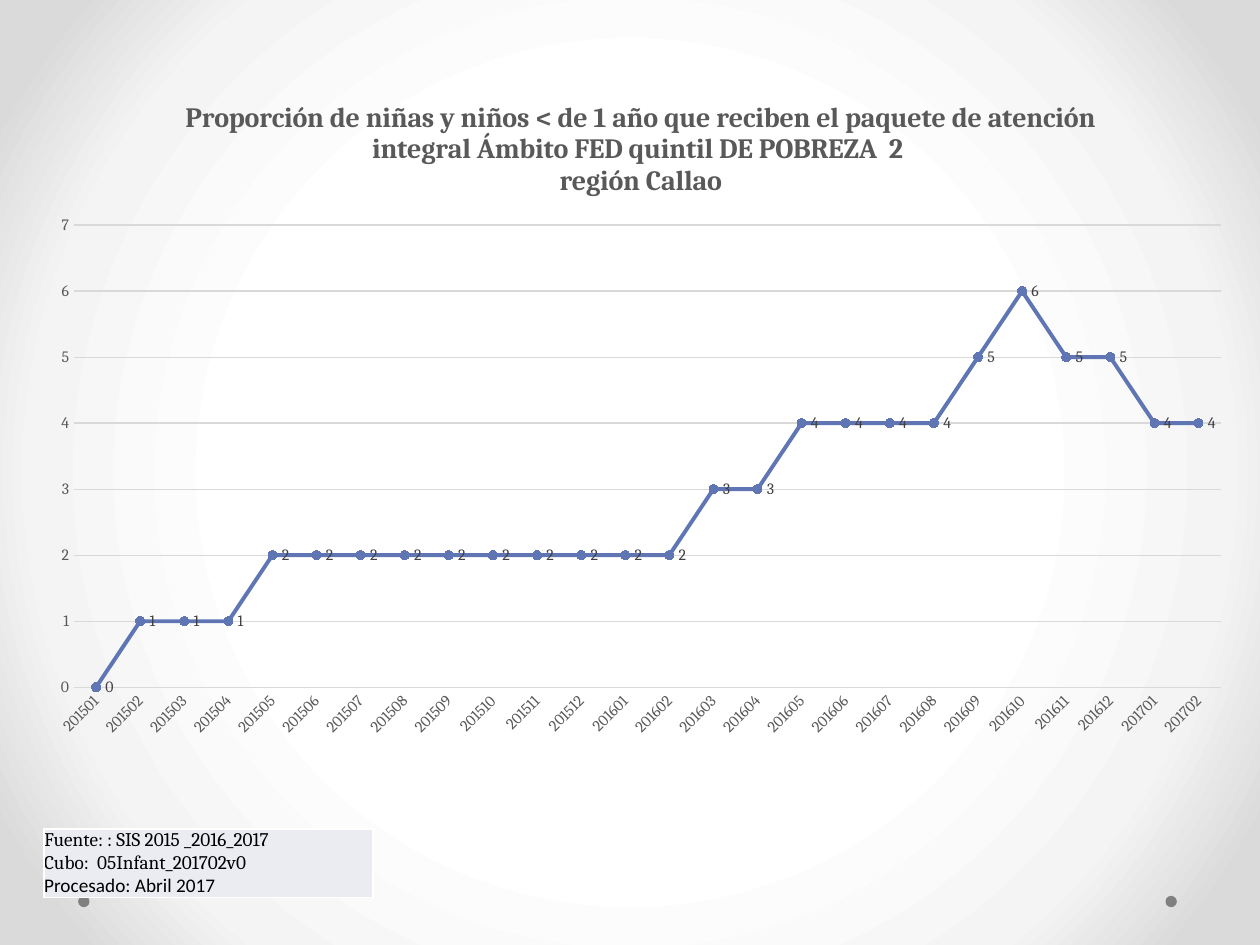
from typing import NamedTuple

from pptx import Presentation
from pptx import util as u
from pptx.chart.data import CategoryChartData
from pptx.dml.color import RGBColor
from pptx.enum import chart as ch, shapes, text
from pptx.oxml import parse_xml
from pptx.oxml.ns import nsdecls

WHITE = RGBColor(0xFF, 0xFF, 0xFF)
BLACK = RGBColor(0, 0, 0)
DOT_GREY = RGBColor(0x80, 0x80, 0x80)
AXIS_GREY = RGBColor(0x59, 0x59, 0x59)
LABEL_GREY = RGBColor(0x40, 0x40, 0x40)
GRID_GREY = RGBColor(0xD9, 0xD9, 0xD9)
SERIES_BLUE = RGBColor(0x60, 0x76, 0xB4)
SOURCE_FILL = RGBColor(0xEA, 0xEC, 0xF2)
BACKGROUND_STOPS = ((50, WHITE), (76, RGBColor(0xF4, 0xF4, 0xF4)),
                    (92, RGBColor(0xDA, 0xDA, 0xDA)))

SLIDE_WIDTH, SLIDE_HEIGHT = u.Inches(10), u.Inches(7.5)
MONTHS = [f"{year}{month:02d}" for year, last in ((2015, 12), (2016, 12), (2017, 2))
          for month in range(1, last + 1)]
CHILDREN = [0, 1, 1, 1] + [2] * 10 + [3, 3] + [4] * 4 + [5, 6, 5, 5, 4, 4]


class Area(NamedTuple):
    """A rectangle in shares of its container's width and height."""
    left: float
    top: float
    width: float
    height: float

    def on_slide(self) -> tuple:
        return tuple(u.Emu(round(share * size)) for share, size in
                     zip(self, (SLIDE_WIDTH, SLIDE_HEIGHT) * 2))


class Line(NamedTuple):
    wording: str
    font: str = "Cambria"


DOTS = [Area(left, 0.948, 0.009, 0.012) for left in (0.062, 0.925)]
SOURCE_AREA = Area(0.035, 0.877, 0.261, 0.073)
CHART_AREA = Area(0.028, 0.08, 0.961, 0.713)
PLOT_AREA = Area(0.032, 0.222, 0.947, 0.686)
TITLE = [Line("Proporción de niñas y niños < de 1 año que reciben el paquete de atención "
              "integral Ámbito FED quintil DE POBREZA  2 "),
         Line("región Callao")]
SOURCE = [Line("Fuente: : SIS 2015 _2016_2017"), Line("Cubo:  05Infant_201702v0"),
          Line("Procesado: Abril 2017", "Calibri")]


def format_font(font, *, size: float, color: RGBColor, name: str = "Cambria",
                bold: bool = False) -> None:
    font.size, font.name, font.bold = u.Pt(size), name, bold
    font.color.rgb = color


def write_lines(frame, lines: list[Line], *, size: float, color: RGBColor,
                bold: bool = False, align=text.PP_ALIGN.LEFT) -> None:
    for index, line in enumerate(lines):
        paragraph = frame.add_paragraph() if index else frame.paragraphs[0]
        paragraph.alignment = align
        run = paragraph.add_run()
        run.text = line.wording
        format_font(run.font, size=size, color=color, name=line.font, bold=bold)


def paint_background(slide) -> None:
    """Give the slide a round gradient that darkens towards the edges."""
    stops = "".join(f'<a:gs pos="{share * 1000}"><a:srgbClr val="{color}"/></a:gs>'
                    for share, color in BACKGROUND_STOPS)
    slide.element.cSld.insert(0, parse_xml(
        f'<p:bg {nsdecls("p", "a")}><p:bgPr><a:gradFill rotWithShape="1">'
        f'<a:gsLst>{stops}</a:gsLst><a:path path="circle">'
        '<a:fillToRect l="50000" t="50000" r="50000" b="50000"/></a:path>'
        '</a:gradFill><a:effectLst/></p:bgPr></p:bg>'))


def add_dot(slide, area: Area) -> None:
    dot = slide.shapes.add_shape(shapes.MSO_SHAPE.OVAL, *area.on_slide())
    dot.shadow.inherit = False
    dot.fill.solid()
    dot.fill.fore_color.rgb = DOT_GREY
    dot.line.fill.background()


def add_source_table(slide) -> None:
    table = slide.shapes.add_table(1, 1, *SOURCE_AREA.on_slide()).table
    table.first_row = table.horz_banding = False
    cell = table.cell(0, 0)
    cell.margin_left = cell.margin_right = cell.margin_top = cell.margin_bottom = 0
    cell.vertical_anchor = text.MSO_ANCHOR.BOTTOM
    cell.fill.solid()
    cell.fill.fore_color.rgb = SOURCE_FILL
    write_lines(cell.text_frame, SOURCE, size=11, color=BLACK)
    properties = cell.fill._xPr
    for index, side in enumerate("LRTB"):
        properties.insert(index, parse_xml(
            f'<a:ln{side} {nsdecls("a")} w="{u.Pt(1)}"><a:solidFill>'
            f'<a:srgbClr val="{WHITE}"/></a:solidFill></a:ln{side}>'))


def style_axis(axis) -> None:
    axis.major_tick_mark = axis.minor_tick_mark = ch.XL_TICK_MARK.NONE
    format_font(axis.tick_labels.font, size=9, color=AXIS_GREY)


def style_line(line, color: RGBColor, width: float) -> None:
    line.color.rgb = color
    line.width = u.Pt(width)


def style_series(series) -> None:
    series.smooth = False
    style_line(series.format.line, SERIES_BLUE, 2.25)
    marker = series.marker
    marker.style, marker.size = ch.XL_MARKER_STYLE.CIRCLE, 5
    marker.format.fill.solid()
    marker.format.fill.fore_color.rgb = SERIES_BLUE
    style_line(marker.format.line, SERIES_BLUE, 0.75)
    labels = series.data_labels
    labels.show_value = True
    labels.position = ch.XL_LABEL_POSITION.RIGHT
    labels.number_format, labels.number_format_is_linked = "0", False
    format_font(labels.font, size=9, color=LABEL_GREY)


def place_plot(chart) -> None:
    """Fix the inner plot area and slant the month labels."""
    plot_area = chart.element.xpath(".//c:plotArea")[0]
    for layout in plot_area.xpath("./c:layout"):
        plot_area.remove(layout)
    shares = "".join(f'<c:{tag} val="{share}"/>' for tag, share in zip("xywh", PLOT_AREA))
    plot_area.insert(0, parse_xml(
        f'<c:layout {nsdecls("c")}><c:manualLayout><c:layoutTarget val="inner"/>'
        f'<c:xMode val="edge"/><c:yMode val="edge"/>{shares}</c:manualLayout></c:layout>'))
    plot_area.xpath("./c:catAx/c:txPr/a:bodyPr")[0].set("rot", str(-45 * 60000))


def add_coverage_chart(slide) -> None:
    data = CategoryChartData(number_format="0")
    data.categories = MONTHS
    data.add_series("Series 1", CHILDREN)
    chart = slide.shapes.add_chart(ch.XL_CHART_TYPE.LINE_MARKERS,
                                   *CHART_AREA.on_slide(), data).chart
    format_font(chart.font, size=10, color=BLACK)
    chart.has_legend = False
    chart.has_title = True
    chart.chart_title.include_in_layout = False
    write_lines(chart.chart_title.text_frame, TITLE, size=16, color=AXIS_GREY,
                bold=True, align=text.PP_ALIGN.CENTER)

    months, values = chart.category_axis, chart.value_axis
    for axis in (months, values):
        style_axis(axis)
    style_line(months.format.line, GRID_GREY, 0.75)
    values.format.line.fill.background()
    style_line(values.major_gridlines.format.line, GRID_GREY, 0.75)
    values.minimum_scale, values.maximum_scale, values.major_unit = 0, 7, 1
    values.tick_labels.number_format = "0"
    values.tick_labels.number_format_is_linked = False

    chart.plots[0].vary_by_categories = False
    style_series(chart.plots[0].series[0])
    place_plot(chart)


def main() -> None:
    deck = Presentation()
    deck.slide_width, deck.slide_height = SLIDE_WIDTH, SLIDE_HEIGHT
    slide = deck.slides.add_slide(deck.slide_layouts[6])
    paint_background(slide)
    for area in DOTS:
        add_dot(slide, area)
    add_source_table(slide)
    add_coverage_chart(slide)
    deck.save("out.pptx")


if __name__ == "__main__":
    main()
